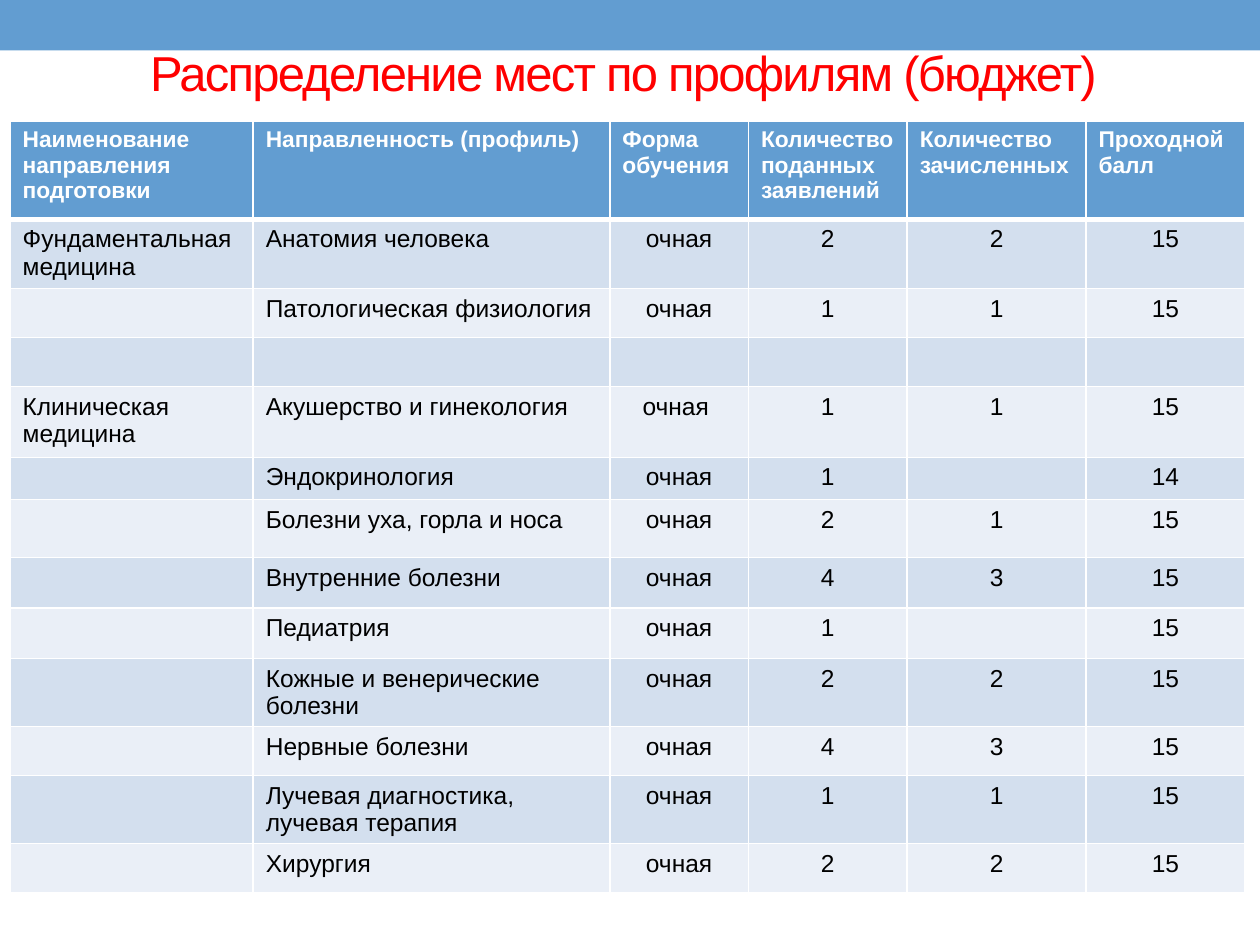
from lxml.etree import SubElement
from pptx import Presentation
from pptx.dml.color import RGBColor
from pptx.enum.shapes import MSO_SHAPE as Shape
from pptx.enum.text import MSO_ANCHOR as Anchor, PP_ALIGN as Align
from pptx.oxml.ns import qn
from pptx.util import Inches, Pt

COLORS = {
    "blue": "629DD1",
    "red": "FF0000",
    "white": "FFFFFF",
    "black": "000000",
    "band_dark": "D3DFEE",
    "band_light": "EAEFF7",
}
FONT = "Arial"
COLUMN_WIDTHS = [1.93, 2.83, 1.1, 1.26, 1.42, 1.26]
ROW_HEIGHTS = [0.78, 0.55, 0.39, 0.39, 0.56, 0.33, 0.46,
               0.4, 0.4, 0.54, 0.39, 0.54, 0.39]
HEADINGS = [
    "Наименование направления подготовки",
    "Направленность (профиль)",
    "Форма обучения",
    "Количество поданных заявлений",
    "Количество зачисленных",
    "Проходной балл",
]
PROFILES = [
    ("Фундаментальная медицина", "Анатомия человека", "очная", "2", "2", "15"),
    ("", "Патологическая физиология", "очная", "1", "1", "15"),
    ("",) * 6,
    ("Клиническая медицина", "Акушерство и гинекология", "очная ", "1", "1", "15"),
    ("", "Эндокринология", "очная", "1", "", "14"),
    ("", "Болезни уха, горла и носа", "очная", "2", "1", "15"),
    ("", "Внутренние болезни", "очная", "4", "3", "15"),
    ("", "Педиатрия", "очная", "1", "", "15"),
    ("", "Кожные и венерические болезни", "очная", "2", "2", "15"),
    ("", "Нервные болезни", "очная", "4", "3", "15"),
    ("", "Лучевая диагностика, лучевая терапия", "очная", "1", "1", "15"),
    ("", "Хирургия", "очная", "2", "2", "15"),
]


def color(name):
    return RGBColor.from_string(COLORS[name])


def write(frame, text, size=14, ink="black", bold=False, align=Align.LEFT, spacing=None):
    paragraph = frame.paragraphs[0]
    paragraph.alignment = align
    if not text:
        paragraph._p.get_or_add_endParaRPr().set("sz", str(size * 100))
        return
    run = paragraph.add_run()
    run.text = text
    run.font.name = FONT
    run.font.size = Pt(size)
    run.font.bold = bold
    run.font.color.rgb = color(ink)
    if spacing is not None:
        run.font._element.set("spc", str(spacing * 100))


def set_borders(cell, top=1, bottom=1):
    properties = cell._tc.get_or_add_tcPr()
    widths = {"a:lnL": 1, "a:lnR": 1, "a:lnT": top, "a:lnB": bottom}
    for position, (tag, width) in enumerate(widths.items()):
        line = SubElement(properties, qn(tag), w=str(Pt(width)))
        fill = SubElement(line, qn("a:solidFill"))
        SubElement(fill, qn("a:srgbClr"), val=COLORS["white"])
        properties.insert(position, line)


def add_band(slide, left, top, width, height):
    band = slide.shapes.add_shape(Shape.RECTANGLE, left, top, width, height)
    band.shadow.inherit = False
    band.fill.solid()
    band.fill.fore_color.rgb = color("blue")
    band.line.fill.background()


def place_title(slide, left, top, width, height):
    title = slide.shapes.title
    title.left, title.top, title.width, title.height = left, top, width, height
    title.text_frame.word_wrap = True
    title.text_frame.vertical_anchor = Anchor.MIDDLE
    write(title.text_frame, "Распределение мест по профилям (бюджет) ",
          size=28, ink="red", align=Align.CENTER, spacing=-1)


def add_places_table(slide, left, top, width, height):
    rows = [HEADINGS, *PROFILES]
    table = slide.shapes.add_table(
        len(rows), len(HEADINGS), left, top, width, height).table
    for column, column_width in zip(table.columns, COLUMN_WIDTHS):
        column.width = Inches(column_width)
    for row, row_height in zip(table.rows, ROW_HEIGHTS):
        row.height = Inches(row_height)
    for r, texts in enumerate(rows):
        heading = r == 0
        band = "blue" if heading else "band_dark" if r % 2 else "band_light"
        for c, text in enumerate(texts):
            cell = table.cell(r, c)
            cell.fill.solid()
            cell.fill.fore_color.rgb = color(band)
            set_borders(cell, top=3 if r == 1 else 1, bottom=3 if heading else 1)
            if heading:
                write(cell.text_frame, text, size=13, ink="white", bold=True)
            else:
                write(cell.text_frame, text, align=Align.LEFT if c < 2 else Align.CENTER)


def main():
    presentation = Presentation()
    presentation.slide_width = Inches(10)
    presentation.slide_height = Inches(7.5)
    slide = presentation.slides.add_slide(presentation.slide_layouts[5])
    add_band(slide, 0, 0, presentation.slide_width, Inches(0.4))
    place_title(slide, Inches(0.35), Inches(0.13), Inches(9.29), Inches(0.88))
    add_places_table(slide, Inches(0.08), Inches(0.96),
                     Inches(sum(COLUMN_WIDTHS)), Inches(sum(ROW_HEIGHTS)))
    presentation.save("out.pptx")


if __name__ == "__main__":
    main()
